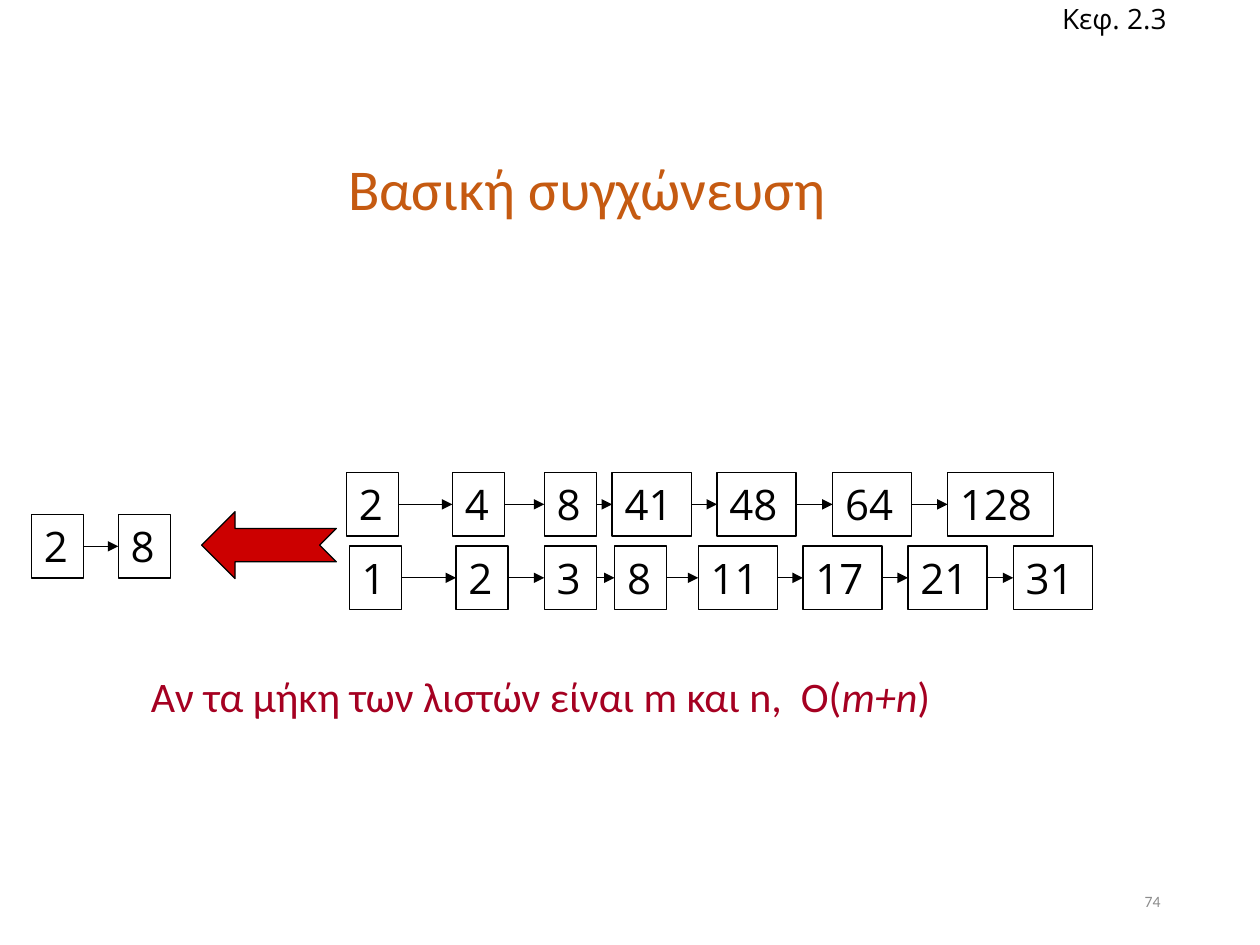
"""Build the slide on merging two sorted postings lists."""
import pptx
import pptx.chart.data
import pptx.dml.color
import pptx.enum.shapes
import pptx.enum.text
import pptx.oxml
import pptx.oxml.ns
import pptx.util

Pt = pptx.util.Pt
ALIGN = pptx.enum.text.PP_ALIGN
ANCHOR = pptx.enum.text.MSO_ANCHOR
SHAPE = pptx.enum.shapes.MSO_SHAPE

COLORS = {"ink": "000000", "title": "C55A11", "note": "A50021",
          "arrow": "CC0000", "number": "8C8C8C"}

LISTS = [
    (270, [("2", 198), ("4", 258.5), ("8", 311), ("41", 349.8),
           ("48", 409.7), ("64", 475.8), ("128", 541.5)]),
    (312, [("1", 199.6), ("2", 260.6), ("3", 311), ("8", 351.2),
           ("11", 399), ("17", 458.8), ("21", 518.8), ("31", 579)]),
    (294, [("2", 18), ("8", 67.6)]),
]
NODE_WIDTHS = {1: 29.8, 2: 45.2, 3: 60.5}
NODE_HEIGHT = 36.4

TEXTS = [
    dict(box=(25.2, 57.6, 620.6, 104.4), runs=[("Βασική συγχώνευση", False)],
         size=33, font="Calibri", color="title", align=ALIGN.CENTER,
         anchor=ANCHOR.MIDDLE, spacing=0.9),
    dict(box=(508.3, 500.4, 162, 28.8), runs=[("74", False)], size=9,
         font="Calibri", color="number", align=ALIGN.RIGHT, anchor=ANCHOR.MIDDLE),
    dict(box=(79.2, 379.4, 463.7, 36),
         runs=[("Αν τα μήκη των λιστών είναι m και n,  O(", False),
               ("m+n", True), (")", False)],
         size=24, font="Calibri", color="note"),
    dict(box=(599.8, -2.9, 79.2, 26.6), runs=[("Κεφ. 2.3", False)], size=16,
         font="Open Sans", color="ink", anchor=ANCHOR.MIDDLE),
]


def rgb(name):
    return pptx.dml.color.RGBColor.from_string(COLORS[name])


def write(sp, runs, size, font, color, align=ALIGN.LEFT, anchor=ANCHOR.TOP, spacing=None):
    tf = sp.text_frame
    tf.word_wrap = True
    tf.vertical_anchor = anchor
    p = tf.paragraphs[0]
    p.alignment = align
    p.line_spacing = spacing
    for text, italic in runs:
        r = p.add_run()
        r.text = text
        r.font.size = Pt(size)
        r.font.name = font
        r.font.italic = italic
        r.font.color.rgb = rgb(color)


def outline(sp):
    sp.line.color.rgb = rgb("ink")
    sp.line.width = Pt(0.75)


def add_node(s, text, left, top):
    width = NODE_WIDTHS[len(text)]
    sp = s.shapes.add_shape(SHAPE.RECTANGLE, Pt(left), Pt(top), Pt(width), Pt(NODE_HEIGHT))
    sp.shadow.inherit = False
    sp.fill.background()
    outline(sp)
    write(sp, [(text, False)], 24, "Open Sans", "ink")
    return sp


def add_link(s, start, end):
    link = s.shapes.add_connector(pptx.enum.shapes.MSO_CONNECTOR.STRAIGHT, 0, 0, 0, 0)
    link.begin_connect(start, 3)
    link.end_connect(end, 1)
    outline(link)
    tail = pptx.oxml.ns.qn("a:tailEnd")
    link.line._get_or_add_ln().append(pptx.oxml.xmlchemy.OxmlElement("a:tailEnd"))
    link.line._get_or_add_ln().find(tail).set("type", "triangle")
    link._element.spPr.append(pptx.oxml.xmlchemy.OxmlElement("a:effectLst"))


def add_merge_arrow(s):
    sp = s.shapes.add_shape(SHAPE.NOTCHED_RIGHT_ARROW, Pt(115.2), Pt(292.4), Pt(77), Pt(38.2))
    sp.rotation = 180
    sp.adjustments[0] = 0.5
    sp.adjustments[1] = 0.5
    sp.shadow.inherit = False
    sp.fill.solid()
    sp.fill.fore_color.rgb = rgb("arrow")
    outline(sp)


def main():
    prs = pptx.Presentation()
    prs.slide_width, prs.slide_height = Pt(720), Pt(540)
    s = prs.slides.add_slide(prs.slide_layouts[6])
    for item in TEXTS:
        style = dict(item)
        box = style.pop("box")
        write(s.shapes.add_textbox(*map(Pt, box)), **style)
    for top, entries in LISTS:
        nodes = [add_node(s, text, left, top) for text, left in entries]
        for start, end in zip(nodes, nodes[1:]):
            add_link(s, start, end)
    add_merge_arrow(s)
    prs.save("out.pptx")


if __name__ == "__main__":
    main()
